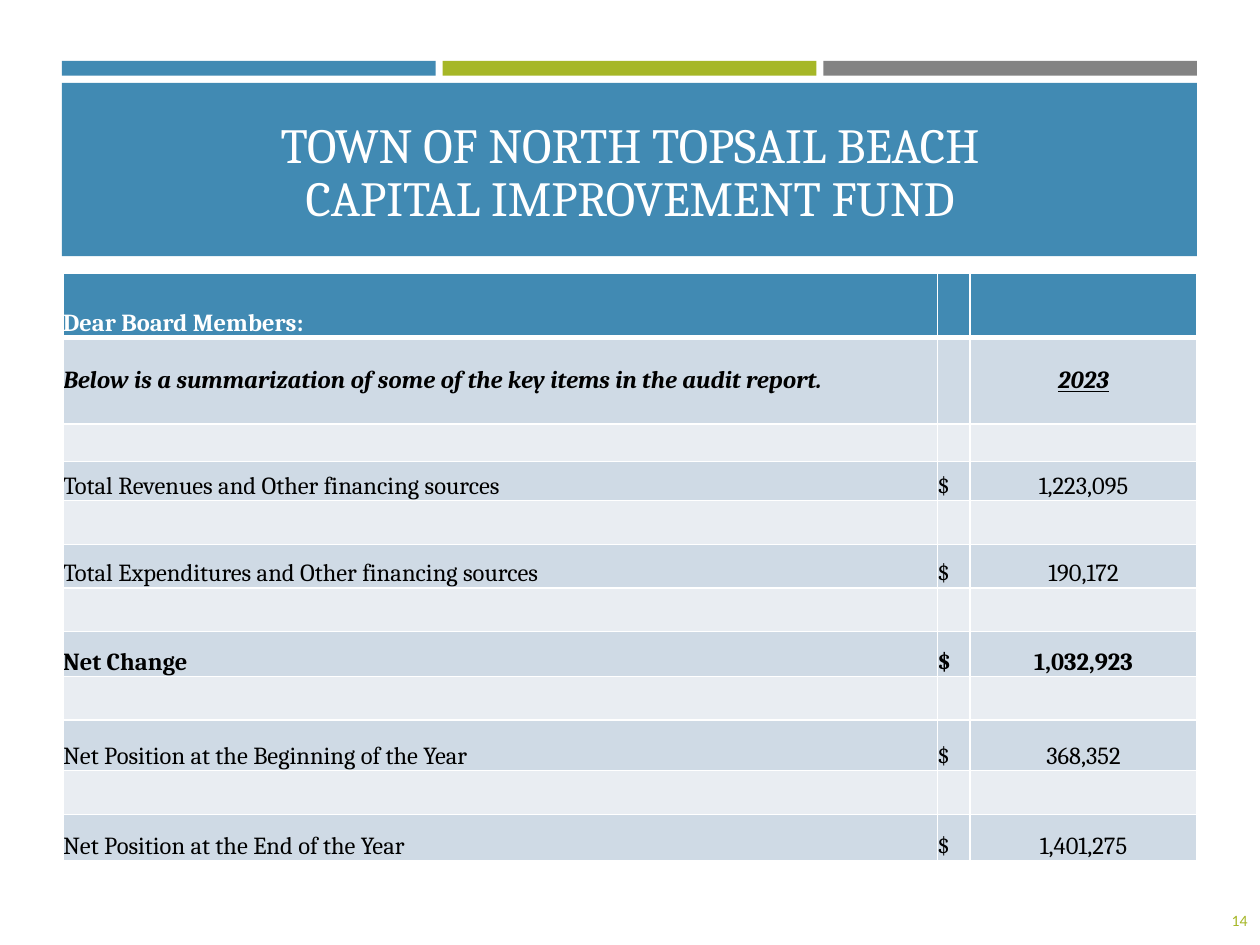
from dataclasses import dataclass

from lxml.etree import SubElement
from pptx import Presentation
from pptx.dml.color import RGBColor
from pptx.enum.shapes import MSO_SHAPE as Shape
from pptx.enum.text import MSO_ANCHOR as Anchor, PP_ALIGN as Align
from pptx.oxml.ns import qn
from pptx.util import Pt


@dataclass(frozen=True)
class Theme:
    blue: str = "418AB3"
    green: str = "A6B727"
    gray: str = "838383"
    white: str = "FFFFFF"
    black: str = "000000"
    band: str = "CFDAE5"
    light_band: str = "E9EDF2"
    heading_font: str = "Cambria"
    number_font: str = "Calibri"
    title_size: int = 28
    table_size: int = 14
    number_size: int = 9


@dataclass
class Entry:
    """One table row; heights are in points."""
    height: float
    cells: tuple = ("", "", "")
    bold: bool = False
    italic: bool = False
    underline_value: bool = False
    anchor: Anchor = Anchor.BOTTOM


class SlideBuilder:
    def __init__(self, slide, theme):
        self.slide = slide
        self.theme = theme

    def style(self, paragraph, size, color, align, font=None, bold=False, italic=False):
        paragraph.alignment = align
        face = paragraph.font
        face.name = font or self.theme.heading_font
        face.size = Pt(size)
        face.bold, face.italic = bold, italic
        face.color.rgb = RGBColor.from_string(color)

    def bar(self, left, top, width, height, color):
        bar = self.slide.shapes.add_shape(
            Shape.RECTANGLE, Pt(left), Pt(top), Pt(width), Pt(height))
        bar.shadow.inherit = False
        bar.fill.solid()
        bar.fill.fore_color.rgb = RGBColor.from_string(color)
        bar.line.fill.background()

    def title(self, text, left, top, width, height):
        """Fill the title placeholder and bring it in front of the banner."""
        title = self.slide.shapes.title
        title.left, title.top, title.width, title.height = map(Pt, (left, top, width, height))
        frame = title.text_frame
        frame.text = text
        frame.word_wrap = True
        frame.vertical_anchor = Anchor.BOTTOM
        heading = frame.paragraphs[0]
        heading.line_spacing = 0.9
        self.style(heading, self.theme.title_size, self.theme.white, Align.CENTER)
        self.slide.shapes.element.append(title.element)

    def page_number(self, text, left, top, width, height):
        frame = self.slide.shapes.add_textbox(
            Pt(left), Pt(top), Pt(width), Pt(height)).text_frame
        frame.word_wrap = True
        frame.vertical_anchor = Anchor.MIDDLE
        frame.text = text
        self.style(frame.paragraphs[0], self.theme.number_size, self.theme.green,
                   Align.RIGHT, font=self.theme.number_font)

    def borders(self, cell, widths):
        """Add white borders; must run before the cell is filled."""
        properties = cell._tc.get_or_add_tcPr()
        for side, width in widths.items():
            line = SubElement(properties, qn(f"a:ln{side}"), w=str(Pt(width)))
            fill = SubElement(line, qn("a:solidFill"))
            SubElement(fill, qn("a:srgbClr"), val=self.theme.white)

    def table(self, entries, column_widths, left, top):
        total_height = sum(entry.height for entry in entries)
        table = self.slide.shapes.add_table(
            len(entries), len(column_widths), Pt(left), Pt(top),
            Pt(sum(column_widths)), Pt(total_height)).table
        table.horz_banding = False
        for column, width in zip(table.columns, column_widths):
            column.width = Pt(width)
        for index, entry in enumerate(entries):
            table.rows[index].height = Pt(entry.height)
            for column, text in enumerate(entry.cells):
                self.cell(table.cell(index, column), text, entry, index, column)

    def cell(self, cell, text, entry, row, column):
        theme = self.theme
        is_header = row == 0
        is_value = column == 2
        widths = {"L": 1, "R": 1, "T": 1, "B": 3 if is_header else 1}
        if row == 1:
            widths["T"] = 3
        self.borders(cell, widths)
        band = theme.band if row % 2 else theme.light_band
        cell.fill.solid()
        cell.fill.fore_color.rgb = RGBColor.from_string(theme.blue if is_header else band)
        cell.margin_left = cell.margin_right = cell.margin_top = cell.margin_bottom = 0
        cell.vertical_anchor = entry.anchor
        cell.text = text
        paragraph = cell.text_frame.paragraphs[0]
        self.style(paragraph, theme.table_size, theme.white if is_header else theme.black,
                   Align.CENTER if is_value else Align.LEFT,
                   bold=entry.bold, italic=entry.italic)
        if is_value and entry.underline_value:
            paragraph.font.underline = True


def main():
    theme = Theme()
    deck = Presentation()
    deck.slide_width, deck.slide_height = Pt(720), Pt(540)
    builder = SlideBuilder(deck.slides.add_slide(deck.slide_layouts[5]), theme)

    left, banner_width, gap = 35.4, 648.6, 4
    bar_width = (banner_width - 2 * gap) / 3
    for index, color in enumerate((theme.blue, theme.green, theme.gray)):
        builder.bar(left + index * (bar_width + gap), 34.8, bar_width, 8.4, color)
    builder.bar(left, 47.4, banner_width, 99, theme.blue)
    builder.title("TOWN OF NORTH TOPSAIL BEACH\vCAPITAL IMPROVEMENT FUND", 18, 25.2, 684, 108)

    entries = [
        Entry(36.6, ("Dear Board Members:", "", ""), bold=True),
        Entry(49.4, ("Below is a summarization of some of the key items in the audit report.",
                     "", "2023"),
              bold=True, italic=True, underline_value=True, anchor=Anchor.MIDDLE),
        Entry(21.3),
        Entry(22.4, ("Total Revenues and Other financing sources", "$", "1,223,095")),
        Entry(25),
        Entry(25, ("Total Expenditures and Other financing sources", "$", "190,172")),
        Entry(25),
        Entry(25.6, ("Net Change", "$", "1,032,923"), bold=True),
        Entry(25),
        Entry(28.8, ("Net Position at the Beginning of the Year", "$", "368,352")),
        Entry(25),
        Entry(26.6, ("Net Position at the End of the Year", "$", "1,401,275")),
    ]
    builder.table(entries, (499.7, 18.7, 129.6), 36, 156.4)
    builder.page_number("14", 659.5, 511.2, 60.5, 28.8)
    deck.save("out.pptx")


if __name__ == "__main__":
    main()
